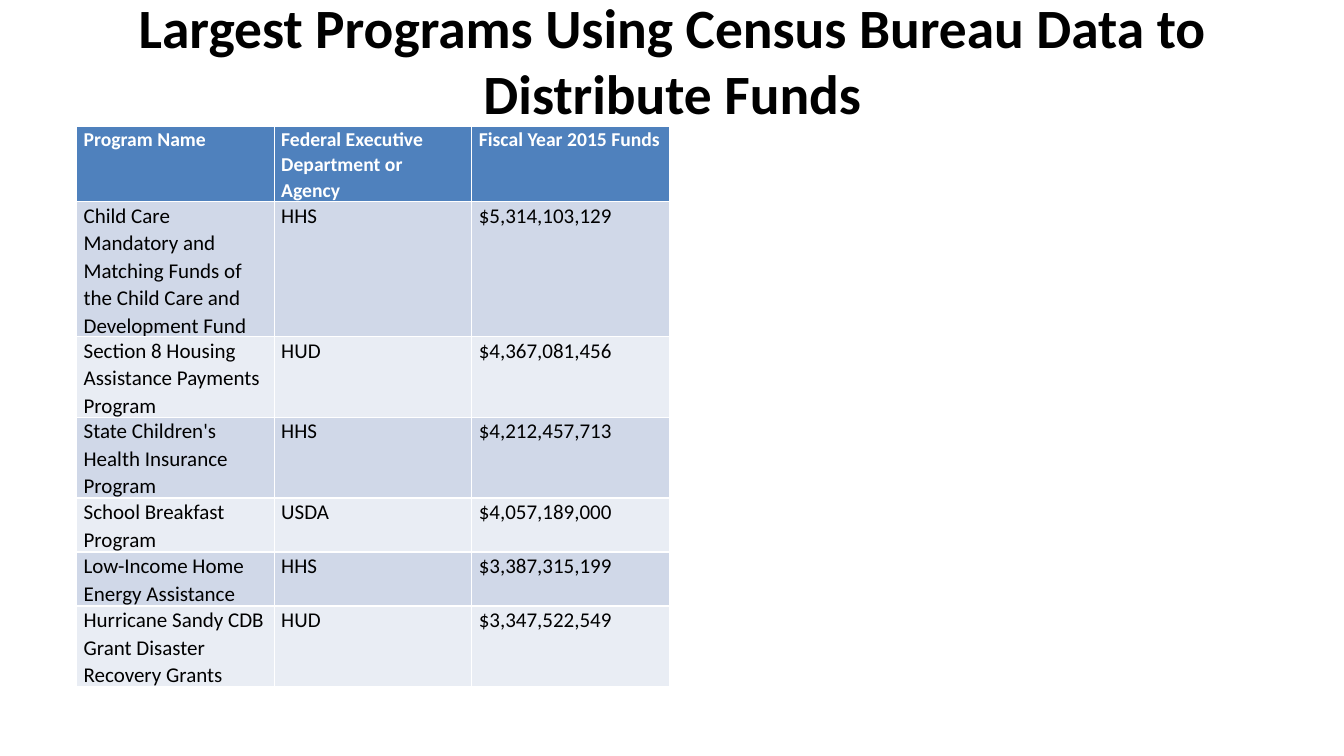
import pptx
import pptx.dml.color
import pptx.enum.text
import pptx.util

Inches = pptx.util.Inches
Pt = pptx.util.Pt
RGBColor = pptx.dml.color.RGBColor

BLACK = RGBColor(0x00, 0x00, 0x00)
WHITE = RGBColor(0xFF, 0xFF, 0xFF)
HEADER_BLUE = RGBColor(0x4F, 0x81, 0xBD)
BAND_FILLS = (RGBColor(0xD0, 0xD8, 0xE8), RGBColor(0xE9, 0xED, 0xF4))

TITLE = "Largest Programs Using Census Bureau Data to Distribute Funds"
HEADER = ("Program Name", "Federal Executive Department or Agency", "Fiscal Year 2015 Funds")
PROGRAMS = (
    ("Child Care Mandatory and Matching Funds of the Child Care and Development Fund",
     "HHS", "$5,314,103,129"),
    ("Section 8 Housing Assistance Payments Program", "HUD", "$4,367,081,456"),
    ("State Children's Health Insurance Program", "HHS", "$4,212,457,713"),
    ("School Breakfast Program", "USDA", "$4,057,189,000"),
    ("Low-Income Home Energy Assistance", "HHS", "$3,387,315,199"),
    ("Hurricane Sandy CDB Grant Disaster Recovery Grants", "HUD", "$3,347,522,549"),
)


class FundsSlide:
    """Holds the text style and the current slide, and adds its elements."""

    font_name = "Calibri"
    title_format = {"size": Pt(39.6), "bold": True}
    header_format = {"size": Pt(14), "bold": True}
    body_format = {"size": Pt(15), "bold": False}

    def __init__(self, presentation):
        self.slide = presentation.slides.add_slide(presentation.slide_layouts[6])

    def apply_format(self, target, values):
        for name, value in values.items():
            setattr(target, name, value)

    def add_text(self, paragraph, text, font_format, color):
        run = paragraph.add_run()
        run.text = text
        self.apply_format(run.font, {"name": self.font_name, **font_format})
        run.font.color.rgb = color

    def add_title(self, text, left, top, width, height):
        shape = self.slide.shapes.add_textbox(
            Inches(left), Inches(top), Inches(width), Inches(height))
        self.apply_format(shape.text_frame, {
            "word_wrap": True,
            "vertical_anchor": pptx.enum.text.MSO_ANCHOR.MIDDLE,
            "margin_bottom": Inches(0.72),
        })
        paragraph = shape.text_frame.paragraphs[0]
        paragraph.alignment = pptx.enum.text.PP_ALIGN.CENTER
        self.add_text(paragraph, text, self.title_format, BLACK)

    def fill_cell(self, cell, text, fill, font_format, color, space_after):
        self.apply_format(cell, {
            "margin_left": Inches(0.07), "margin_right": Inches(0.07),
            "margin_top": 0, "margin_bottom": 0,
        })
        cell.fill.solid()
        cell.fill.fore_color.rgb = fill
        paragraph = cell.text_frame.paragraphs[0]
        self.apply_format(paragraph, {"line_spacing": 1.07, "space_after": space_after})
        self.add_text(paragraph, text, font_format, color)

    def add_table(self, header, records, left, top, column_width, row_height):
        rows = (header, *records)
        table = self.slide.shapes.add_table(
            len(rows), len(header), Inches(left), Inches(top),
            Inches(column_width * len(header)), Inches(row_height * len(rows))).table
        for column in table.columns:
            column.width = Inches(column_width)
        for row_index, values in enumerate(rows):
            table.rows[row_index].height = Inches(row_height)
            if row_index == 0:
                style = (HEADER_BLUE, self.header_format, WHITE, Pt(8))
            else:
                style = (BAND_FILLS[(row_index - 1) % 2], self.body_format, BLACK, Pt(0))
            for column_index, text in enumerate(values):
                self.fill_cell(table.cell(row_index, column_index), text, *style)


def main():
    presentation = pptx.Presentation()
    presentation.slide_width = Inches(13.33)
    presentation.slide_height = Inches(7.5)
    funds_slide = FundsSlide(presentation)
    funds_slide.add_title(TITLE, 0.67, 0.3, 12, 1.25)
    funds_slide.add_table(HEADER, PROGRAMS, 0.76, 1.25, 1.96, 0.41)
    presentation.save("out.pptx")


if __name__ == "__main__":
    main()
